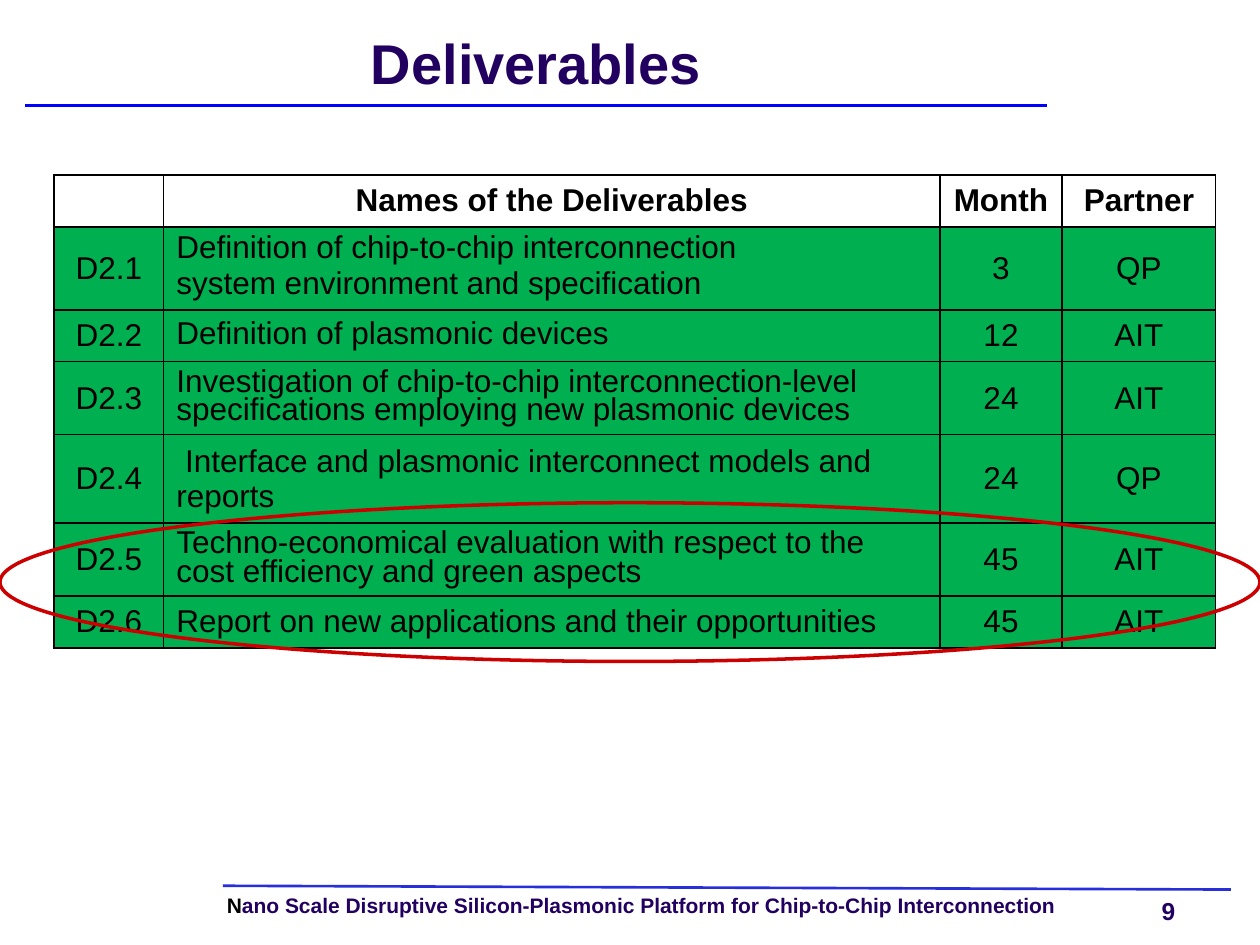
from lxml import etree
from pptx import Presentation
from pptx.dml.color import RGBColor
from pptx.enum.shapes import MSO_CONNECTOR, MSO_SHAPE
from pptx.enum.text import MSO_ANCHOR, PP_ALIGN
from pptx.oxml.ns import qn
from pptx.util import Inches, Pt

LEFT, CENTER = PP_ALIGN.LEFT, PP_ALIGN.CENTER
MIDDLE, TOP = MSO_ANCHOR.MIDDLE, MSO_ANCHOR.TOP
STRAIGHT, ELLIPSE = MSO_CONNECTOR.STRAIGHT, MSO_SHAPE.OVAL

COLORS = {
    "text": "000000",
    "heading": "220060",
    "title_rule": "0000FF",
    "footer_rule": "262FDA",
    "done": "00B050",
    "highlight": "CC0000",
}

HEADERS = ["", "Names of the Deliverables", "Month", "Partner"]
# code, name, month, partner, whether the name is set in tight lines
DELIVERABLES = [
    ("D2.1", "Definition of chip-to-chip interconnection\n"
             "system environment and specification", "3", "QP", True),
    ("D2.2", "Definition of plasmonic devices", "12", "AIT", True),
    ("D2.3", "Investigation of chip-to-chip interconnection-level "
             "specifications employing new plasmonic devices", "24", "AIT", True),
    ("D2.4", " Interface and plasmonic interconnect models and reports",
     "24", "QP", False),
    ("D2.5", "Techno-economical evaluation with respect to the "
             "cost efficiency and green aspects", "45", "AIT", True),
    ("D2.6", "Report on new applications and their opportunities",
     "45", "AIT", False),
]
COL_WIDTHS = [0.87, 6.16, 0.97, 1.22]
ROW_HEIGHTS = [0.41, 0.66, 0.41, 0.58, 0.7, 0.58, 0.41]


def rgb(name):
    return RGBColor.from_string(COLORS[name])


def write(tf, text, size=18, color="text", bold=False, align=LEFT,
          spacing=None, before=0, first_color=None):
    """Fill a text frame, one paragraph a line; first_color tints the first letter."""
    for i, line in enumerate(text.split("\n")):
        p = tf.paragraphs[0] if i == 0 else tf.add_paragraph()
        p.alignment = align
        if spacing:
            p.line_spacing = spacing
        if i and before:
            p.space_before = Pt(before)
        parts = [(line, color)]
        if first_color:
            parts = [(line[:1], first_color), (line[1:], color)]
        for part, part_color in parts:
            r = p.add_run()
            r.text = part
            r.font.name = "Arial"
            r.font.size = Pt(size)
            r.font.bold = bold
            r.font.color.rgb = rgb(part_color)


def add_text(s, x, y, w, h, text, anchor=TOP, wrap=True, **fmt):
    tf = s.shapes.add_textbox(Inches(x), Inches(y), Inches(w), Inches(h)).text_frame
    tf.margin_left = tf.margin_right = tf.margin_top = tf.margin_bottom = 0
    tf.vertical_anchor = anchor
    tf.word_wrap = wrap
    write(tf, text, **fmt)


def add_rule(s, x1, y1, x2, y2, color):
    line = s.shapes.add_connector(STRAIGHT, Inches(x1), Inches(y1),
                                  Inches(x2), Inches(y2))
    line.line.color.rgb = rgb(color)
    line.line.width = Pt(1.5)
    etree.SubElement(line._element.spPr, qn("a:effectLst"))


def set_borders(cell, color="text", width=1):
    tc_pr = cell._tc.get_or_add_tcPr()
    for i, tag in enumerate(("a:lnL", "a:lnR", "a:lnT", "a:lnB")):
        ln = etree.Element(qn(tag), w=str(Pt(width)))
        fill = etree.SubElement(ln, qn("a:solidFill"))
        etree.SubElement(fill, qn("a:srgbClr"), val=COLORS[color])
        tc_pr.insert(i, ln)  # borders come before the fill


def add_title(s, x, y, w, h):
    add_text(s, x, y, w, h, "Deliverables", anchor=MIDDLE, size=32,
             color="heading", bold=True, align=CENTER, spacing=Pt(32))
    add_rule(s, x, y + 0.64, x + w, y + 0.64, "title_rule")


def add_deliverables(s, x, y):
    table = s.shapes.add_table(
        len(ROW_HEIGHTS), len(COL_WIDTHS), Inches(x), Inches(y),
        Inches(sum(COL_WIDTHS)), Inches(sum(ROW_HEIGHTS))).table
    table.first_row = table.horz_banding = False
    for col, width in zip(table.columns, COL_WIDTHS):
        col.width = Inches(width)
    for row, height in zip(table.rows, ROW_HEIGHTS):
        row.height = Inches(height)

    for i, (*values, tight) in enumerate([(*HEADERS, False)] + DELIVERABLES):
        for j, value in enumerate(values):
            cell = table.cell(i, j)
            cell.vertical_anchor = MIDDLE
            if i == 0:
                cell.fill.background()
            else:
                cell.fill.solid()
                cell.fill.fore_color.rgb = rgb("done")
            set_borders(cell)
            is_name = i > 0 and j == 1
            write(cell.text_frame, value, bold=i == 0,
                  align=LEFT if is_name else CENTER,
                  spacing=0.8 if is_name and tight else None, before=4.5)


def add_highlight(s, x, y, w, h):
    ring = s.shapes.add_shape(ELLIPSE, Inches(x), Inches(y), Inches(w), Inches(h))
    ring.shadow.inherit = False
    ring.fill.background()
    ring.line.color.rgb = rgb("highlight")
    ring.line.width = Pt(2)


def add_footer(s, x, y, w):
    add_rule(s, x, y, x + w, y + 0.03, "footer_rule")
    add_text(s, x + 0.03, y + 0.08, 7.14, 0.18,
             "Nano Scale Disruptive Silicon-Plasmonic Platform for "
             "Chip-to-Chip Interconnection",
             size=12, color="heading", bold=True, spacing=0.9, first_color="text")
    add_text(s, x + 7.45, y + 0.08, 0.24, 0.23, "9", wrap=False,
             size=14, color="heading", bold=True)


def main():
    prs = Presentation()
    prs.slide_width, prs.slide_height = Inches(10), Inches(7.5)
    s = prs.slides.add_slide(prs.slide_layouts[6])
    add_footer(s, 1.77, 7.03, 8)
    add_title(s, 0.2, 0.2, 8.11, 0.67)
    add_deliverables(s, 0.43, 1.39)
    add_highlight(s, 0, 3.99, 10, 1.26)  # rings the last two deliverables
    prs.save("out.pptx")


if __name__ == "__main__":
    main()
